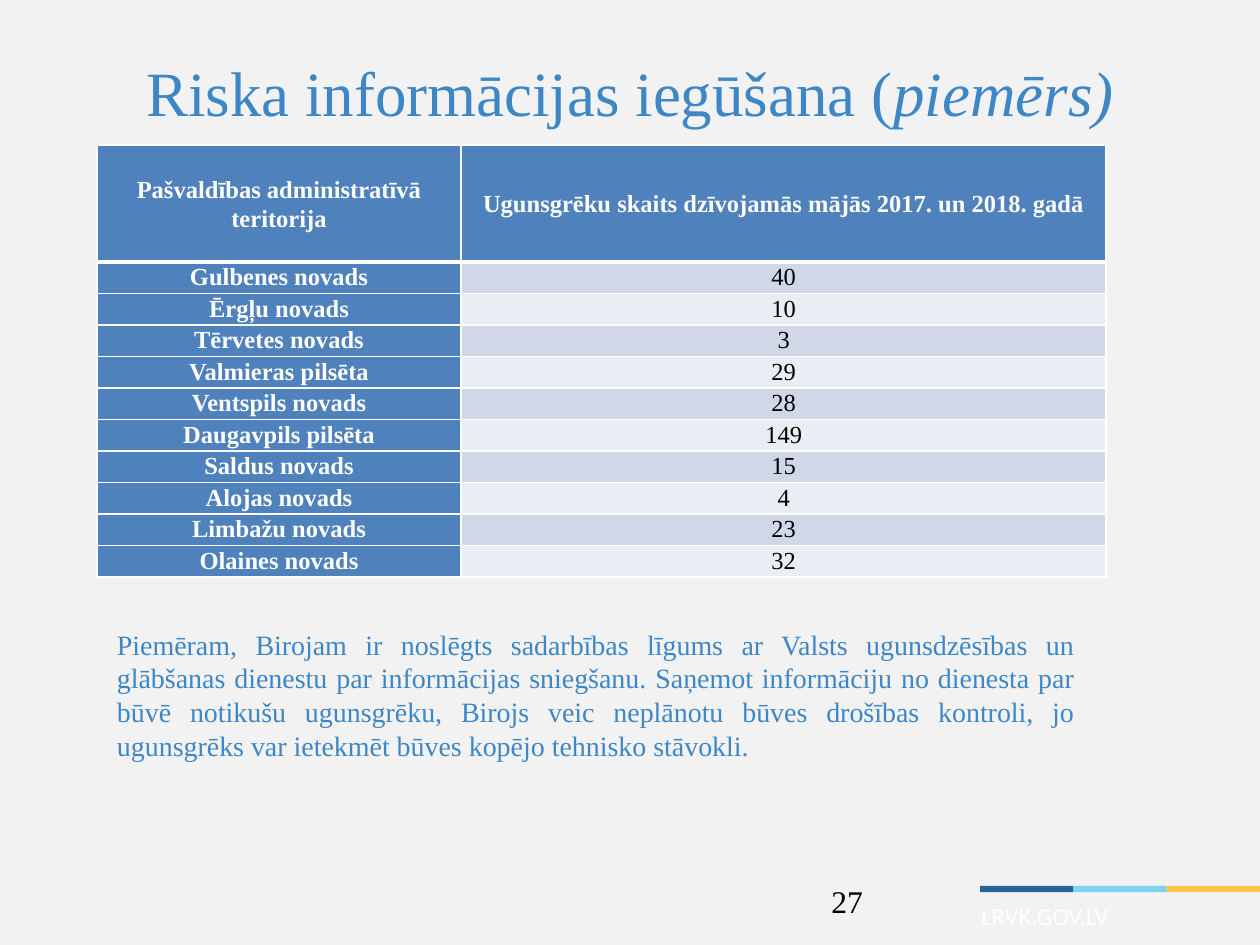
from lxml import etree
from pptx import Presentation, util as u
from pptx.dml.color import RGBColor
from pptx.enum import shapes, text
from pptx.oxml import ns

COLUMNS, ROWS = 100, 75
CELL = u.Inches(0.1)
FONT = "Times New Roman"

BACKGROUND = RGBColor(0xF2, 0xF2, 0xF2)
HEADING = RGBColor(0x3D, 0x87, 0xC7)
WHITE = RGBColor(0xFF, 0xFF, 0xFF)
BLACK = RGBColor(0, 0, 0)
TABLE_BLUE = RGBColor(0x4F, 0x81, 0xBD)
BANDS = [RGBColor(0xD0, 0xD8, 0xE8), RGBColor(0xE9, 0xED, 0xF4)]
STRIPES = [RGBColor(0x2A, 0x64, 0x96), RGBColor(0x7F, 0xD2, 0xF1),
           RGBColor(0xFF, 0xC5, 0x4B)]

HEADER = ("Pašvaldības administratīvā teritorija",
          "Ugunsgrēku skaits dzīvojamās mājās 2017. un 2018. gadā")
FIRES = [
    ("Gulbenes novads", 40),
    ("Ērgļu novads", 10),
    ("Tērvetes novads", 3),
    ("Valmieras pilsēta", 29),
    ("Ventspils novads", 28),
    ("Daugavpils pilsēta", 149),
    ("Saldus novads", 15),
    ("Alojas novads", 4),
    ("Limbažu novads", 23),
    ("Olaines novads", 32),
]
EXAMPLE = (
    "Piemēram, Birojam ir noslēgts sadarbības līgums ar Valsts ugunsdzēsības "
    "un glābšanas dienestu par informācijas sniegšanu. Saņemot informāciju no "
    "dienesta par būvē notikušu ugunsgrēku, Birojs veic neplānotu būves "
    "drošības kontroli, jo ugunsgrēks var ietekmēt būves kopējo tehnisko "
    "stāvokli."
)


def grid(*cells):
    return [round(c * CELL) for c in cells]


def write(p, content, size, color, font=FONT, bold=False, italic=False,
          align=text.PP_ALIGN.LEFT):
    p.alignment = align
    r = p.add_run()
    r.text = content
    r.font.size = u.Pt(size)
    r.font.color.rgb = color
    r.font.bold = bold
    r.font.italic = italic
    if font:
        r.font.name = font


def add_title(s):
    sp = s.shapes.title
    sp.left, sp.top, sp.width, sp.height = grid(5, 3, 90, 8.5)
    sp.text_frame.vertical_anchor = text.MSO_ANCHOR.MIDDLE
    p = sp.text_frame.paragraphs[0]
    style = dict(size=36, color=HEADING, align=text.PP_ALIGN.CENTER)
    write(p, "Riska informācijas iegūšana (", **style)
    write(p, "piemērs)", italic=True, **style)


def add_text(s, cells, content, **style):
    tf = s.shapes.add_textbox(*grid(*cells)).text_frame
    tf.word_wrap = True
    write(tf.paragraphs[0], content, **style)


def add_stripes(s, left=77.8, top=70.3, height=0.5):
    width = (COLUMNS - left) / len(STRIPES)
    for i, color in enumerate(STRIPES):
        sp = s.shapes.add_shape(shapes.MSO_SHAPE.RECTANGLE,
                                *grid(left + i * width, top, width, height))
        sp.shadow.inherit = False
        sp.fill.solid()
        sp.fill.fore_color.rgb = color
        sp.line.fill.background()


def set_borders(cell, **widths):
    tc_pr = cell._tc.get_or_add_tcPr()
    for side in "LRTB":
        ln = etree.SubElement(tc_pr, ns.qn(f"a:ln{side}"),
                              w=str(u.Pt(widths.get(side, 1))))
        fill = etree.SubElement(ln, ns.qn("a:solidFill"))
        etree.SubElement(fill, ns.qn("a:srgbClr"), val=str(WHITE))


def format_cell(cell, content, fill, color, bold, anchor, **borders):
    set_borders(cell, **borders)
    cell.fill.solid()
    cell.fill.fore_color.rgb = fill
    cell.margin_left = cell.margin_right = u.Inches(0.07)
    cell.margin_top = cell.margin_bottom = 0
    cell.vertical_anchor = anchor
    p = cell.text_frame.paragraphs[0]
    p.line_spacing = 1.07
    p.space_after = u.Pt(8)
    write(p, content, 14, color, bold=bold, align=text.PP_ALIGN.CENTER)


def add_fire_table(s):
    widths, header_height, row_height = (28.9, 51.2), 9.3, 2.3
    height = header_height + row_height * len(FIRES)
    table = s.shapes.add_table(len(FIRES) + 1, len(HEADER),
                               *grid(7.7, 11.5, sum(widths), height)).table
    table.horz_banding = False
    for column, width in zip(table.columns, grid(*widths)):
        column.width = width
    heights = grid(header_height, *[row_height] * len(FIRES))
    for row, row_size in zip(table.rows, heights):
        row.height = row_size

    for i, label in enumerate(HEADER):
        format_cell(table.cell(0, i), label, TABLE_BLUE, WHITE, True,
                    text.MSO_ANCHOR.MIDDLE, B=3)
    for i, (place, count) in enumerate(FIRES):
        top = 3 if i == 0 else 1
        format_cell(table.cell(i + 1, 0), place, TABLE_BLUE, WHITE, True,
                    text.MSO_ANCHOR.TOP, T=top)
        format_cell(table.cell(i + 1, 1), str(count), BANDS[i % 2], BLACK,
                    False, text.MSO_ANCHOR.TOP, T=top)


def main():
    prs = Presentation()
    prs.slide_width, prs.slide_height = grid(COLUMNS, ROWS)
    s = prs.slides.add_slide(prs.slide_layouts[5])
    s.background.fill.solid()
    s.background.fill.fore_color.rgb = BACKGROUND

    add_stripes(s)
    add_text(s, (76.9, 71, 20, 3.4), "LRVK.GOV.LV", size=14, color=WHITE,
             font=None)
    add_title(s)
    add_text(s, (65, 69.5, 7.1, 4), "27", size=18, color=BLACK)
    add_fire_table(s)
    add_text(s, (8.3, 49.3, 78, 11.8), EXAMPLE, size=16, color=HEADING,
             align=text.PP_ALIGN.JUSTIFY)
    prs.save("out.pptx")


if __name__ == "__main__":
    main()
